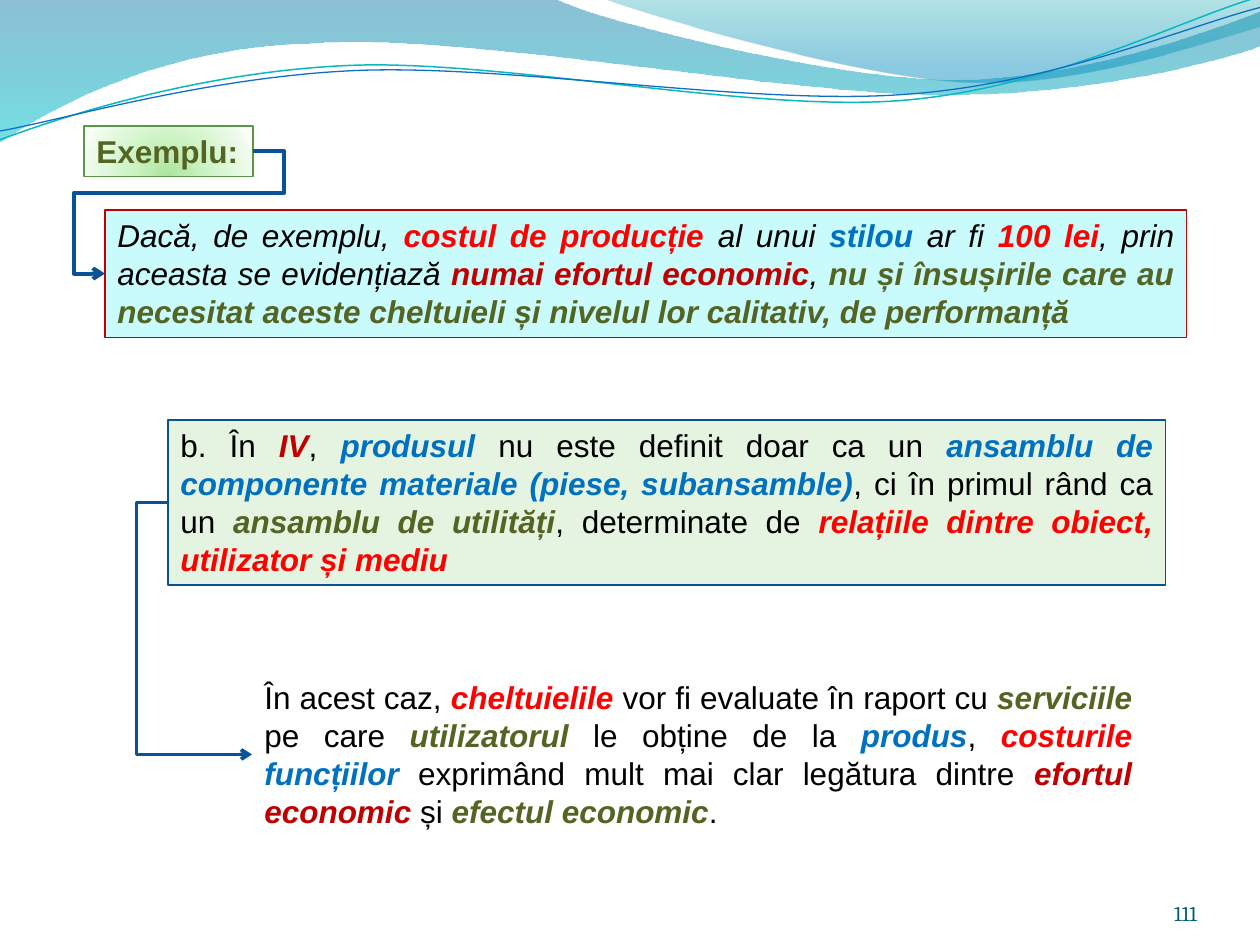
from dataclasses import dataclass
from math import cos, radians, sin

from lxml.etree import SubElement
from pptx import Presentation
from pptx.dml.color import RGBColor
from pptx.enum.shapes import MSO_CONNECTOR as Connector, MSO_SHAPE as Shape
from pptx.enum.text import MSO_ANCHOR as Anchor, MSO_AUTO_SIZE as AutoSize, PP_ALIGN as Align
from pptx.oxml import parse_xml
from pptx.oxml.ns import nsdecls, qn
from pptx.util import Inches, Pt


@dataclass(frozen=True)
class Theme:
    font: str = "Arial"
    number_font: str = "Cambria"
    body_size: float = 18
    number_size: float = 12
    black: str = "000000"
    red: str = "FF0000"
    dark_red: str = "C00000"
    blue: str = "0070C0"
    olive: str = "546422"
    number: str = "045D75"
    connector: str = "095295"
    label_line: str = "5B9747"
    example_fill: str = "C9FAFC"
    definition_fill: str = "E5F4E0"
    teal_wave: str = "0AB8BF"
    blue_wave: str = "0F6FC6"
    wide_band: tuple = ((0, "0074A1", 45), (100, "00C6CF", 55))
    right_band: tuple = ((0, "00A1A9", 30), (80, "008BBF", 45))
    label_glow: tuple = ((0, "ACE49F", 100), (43, "CDF3C4", 100),
                         (93, "EFFBED", 100), (100, "F9FFF8", 100))


THEME = Theme()
DOWNWARD = '<a:lin ang="5400000" scaled="0"/>'
FROM_BELOW = ('<a:path path="circle"><a:fillToRect l="50000" t="130000" '
              'r="50000" b="-30000"/></a:path>')
WAVE_TILT = 2.7
WAVE_CENTER = (5, 0.58)

WIDE_BAND = [(0, 0), (4.4, -0.01), (4.76, 0.17, 6.64, 0.63, 7.58, 0.63),
             (8.53, 0.63, 9.58, 0.26, 10, 0.09), (10.01, 0.36),
             (9.83, 0.44, 8.7, 0.76, 7.46, 0.75), (6.22, 0.75, 3.82, 0.28, 2.57, 0.34),
             (1.29, 0.36, 0.46, 0.83, -0.01, 1.13), (0, 0)]
RIGHT_BAND = [(4.79, -0.01), (5.09, 0.11, 6.82, 0.62, 7.69, 0.65),
              (8.56, 0.69, 9.61, 0.32, 10, 0.21), (10, 0), (4.79, -0.01)]
TEAL_WAVE = [(0, 1.11), (0.48, 0.93, 1.58, 0.57, 2.77, 0.52),
             (3.95, 0.47, 5.93, 0.89, 7.13, 0.8), (8.33, 0.71, 9.38, 0.15, 9.98, -0.02)]
BLUE_WAVE = [(0, 1.04), (0.47, 0.96, 1.64, 0.61, 2.83, 0.56),
             (4.03, 0.51, 5.97, 0.84, 7.17, 0.75), (8.36, 0.67, 9.41, 0.21, 10, 0.06)]

EXAMPLE = [("Dacă, de exemplu, ", None), ("costul de producție ", THEME.red),
           ("al unui ", None), ("stilou", THEME.blue), (" ar fi ", None),
           ("100 lei", THEME.red), (", prin aceasta se evidențiază ", None),
           ("numai efortul economic", THEME.dark_red), (", ", None),
           ("nu și însușirile care au necesitat aceste cheltuieli și nivelul lor "
            "calitativ, de performanță", THEME.olive)]
DEFINITION = [("b. În ", None), ("IV", THEME.dark_red), (", ", None),
              ("produsul", THEME.blue), (" nu este definit doar ca un ", None),
              ("ansamblu de componente materiale (piese, subansamble)", THEME.blue),
              (", ci în primul rând ca un ", None), ("ansamblu de utilități", THEME.olive),
              (", determinate de ", None),
              ("relațiile dintre obiect, utilizator și mediu", THEME.red)]
CONCLUSION = [("În acest caz, ", None), ("cheltuielile", THEME.red),
              (" vor fi evaluate în raport cu ", None), ("serviciile", THEME.olive),
              (" pe care ", None), ("utilizatorul", THEME.olive),
              (" le obține de la ", None), ("produs", THEME.blue), (", ", None),
              ("costurile ", THEME.red), ("funcțiilor", THEME.blue),
              (" exprimând mult mai clar legătura dintre ", None),
              ("efortul economic", THEME.dark_red), (" și ", None),
              ("efectul economic", THEME.olive), (".", None)]


def set_line(shape, color, width):
    shape.line.color.rgb = RGBColor.from_string(color)
    shape.line.width = Pt(width)


def set_gradient(shape, stops, direction):
    stop_xml = "".join(
        f'<a:gs pos="{position * 1000}"><a:srgbClr val="{color}">'
        f'<a:alpha val="{opacity * 1000}"/></a:srgbClr></a:gs>'
        for position, color, opacity in stops)
    gradient = parse_xml(f'<a:gradFill {nsdecls("a")} rotWithShape="1">'
                         f'<a:gsLst>{stop_xml}</a:gsLst>{direction}</a:gradFill>')
    shape.fill.background()
    properties = shape.element.spPr
    properties.replace(properties.find(qn("a:noFill")), gradient)


def style_run(run, color, size=THEME.body_size, font=THEME.font, bold=False, italic=False):
    run.font.name = font
    run.font.size = Pt(size)
    run.font.bold = bold
    run.font.italic = italic
    run.font.color.rgb = RGBColor.from_string(color)


def to_points(segment, tilt):
    angle, (center_x, center_y) = radians(tilt), WAVE_CENTER
    points = []
    for x, y in zip(segment[::2], segment[1::2]):
        across, down = x - center_x, y - center_y
        points.append((Inches(center_x + across * cos(angle) - down * sin(angle)),
                       Inches(center_y + across * sin(angle) + down * cos(angle))))
    return points


def add_outline(shapes, segments, close, tilt=0):
    curves = [to_points(segment, tilt) for segment in segments]
    knots = [points[-1] for points in curves]
    builder = shapes.build_freeform(*knots[0])
    builder.add_line_segments(knots[1:], close=close)
    shape = builder.convert_to_shape()
    shape.shadow.inherit = False
    lines = list(shape.element.spPr.iter(qn("a:lnTo")))
    for line, points in zip(lines, curves[1:]):
        if len(points) == 3:
            point_xml = "".join(f'<a:pt x="{x - shape.left}" y="{y - shape.top}"/>'
                                for x, y in points)
            curve = parse_xml(f'<a:cubicBezTo {nsdecls("a")}>{point_xml}</a:cubicBezTo>')
            line.getparent().replace(line, curve)
    shape.rotation = -tilt
    return shape


def add_waves(slide):
    for segments, stops in ((WIDE_BAND, THEME.wide_band), (RIGHT_BAND, THEME.right_band)):
        band = add_outline(slide.shapes, segments, True)
        set_gradient(band, stops, DOWNWARD)
        band.line.fill.background()
    group = slide.shapes.add_group_shape()
    for segments, color, width in ((TEAL_WAVE, THEME.teal_wave, 0.85),
                                   (BLUE_WAVE, THEME.blue_wave, 0.75)):
        wave = add_outline(group.shapes, segments, False, WAVE_TILT)
        wave.fill.background()
        set_line(wave, color, width)


def add_label(slide, box):
    label = slide.shapes.add_shape(Shape.RECTANGLE, *box)
    label.shadow.inherit = False
    set_gradient(label, THEME.label_glow, FROM_BELOW)
    set_line(label, THEME.label_line, 0.75)
    frame = label.text_frame
    frame.text = "Exemplu:"
    frame.word_wrap = False
    frame.auto_size = AutoSize.SHAPE_TO_FIT_TEXT
    frame.vertical_anchor = Anchor.TOP
    frame.paragraphs[0].alignment = Align.LEFT
    style_run(frame.paragraphs[0].runs[0], THEME.olive, bold=True)
    return label


def add_statement(slide, box, pieces, fill=None, line=None, italic=False):
    if fill:
        shape = slide.shapes.add_shape(Shape.RECTANGLE, *box)
        shape.shadow.inherit = False
        shape.fill.solid()
        shape.fill.fore_color.rgb = RGBColor.from_string(fill)
        set_line(shape, line, 0.75)
    else:
        shape = slide.shapes.add_textbox(*box)
    frame = shape.text_frame
    frame.word_wrap = True
    frame.auto_size = AutoSize.SHAPE_TO_FIT_TEXT
    frame.vertical_anchor = Anchor.TOP
    paragraph = frame.paragraphs[0]
    paragraph.alignment = Align.JUSTIFY
    for text, accent in pieces:
        run = paragraph.add_run()
        run.text = text
        style_run(run, accent or THEME.black, bold=bool(accent), italic=italic or bool(accent))
    return shape


def add_arrow(slide, start, start_site, end, end_site, preset, adjustments, width):
    arrow = slide.shapes.add_connector(Connector.ELBOW, 0, 0, 0, 0)
    arrow.begin_connect(start, start_site)
    arrow.end_connect(end, end_site)
    set_line(arrow, THEME.connector, width)
    properties = arrow.element.spPr
    SubElement(properties.find(qn("a:ln")), qn("a:tailEnd"), type="arrow")
    SubElement(properties, qn("a:effectLst"))
    geometry = properties.find(qn("a:prstGeom"))
    geometry.set("prst", preset)
    guides = geometry.find(qn("a:avLst"))
    for index, value in enumerate(adjustments, 1):
        SubElement(guides, qn("a:gd"), name=f"adj{index}", fmla=f"val {round(value * 100000)}")


def add_page_number(slide, box):
    frame = slide.shapes.add_textbox(*box).text_frame
    frame.margin_left = frame.margin_right = frame.margin_top = frame.margin_bottom = 0
    frame.word_wrap = True
    frame.vertical_anchor = Anchor.BOTTOM
    frame.text = "111"
    frame.paragraphs[0].alignment = Align.RIGHT
    style_run(frame.paragraphs[0].runs[0], THEME.number, THEME.number_size, THEME.number_font)


def grid_box(left, top, width, height):
    return [Inches(left / 12), Inches(top / 12), Inches(width / 12), Inches(height)]


def main():
    presentation = Presentation()
    presentation.slide_width, presentation.slide_height = Inches(10), Inches(7.5)
    slide = presentation.slides.add_slide(presentation.slide_layouts[6])
    add_waves(slide)
    add_page_number(slide, grid_box(104, 83.4, 10, 0.4))
    label = add_label(slide, grid_box(8, 12, 16.1, 0.4))
    example = add_statement(slide, grid_box(10, 20, 103, 1.01), EXAMPLE,
                            THEME.example_fill, THEME.dark_red, italic=True)
    add_arrow(slide, label, 3, example, 1, "bentConnector5", (-0.21, 0.34, 1.21), 2.25)
    definition = add_statement(slide, grid_box(16, 40, 95, 1.31), DEFINITION,
                               THEME.definition_fill, THEME.connector)
    conclusion = add_statement(slide, grid_box(24, 64, 85, 1.31), CONCLUSION)
    add_arrow(slide, definition, 1, conclusion, 1, "bentConnector3", (-0.375,), 2)
    presentation.save("out.pptx")


if __name__ == "__main__":
    main()
